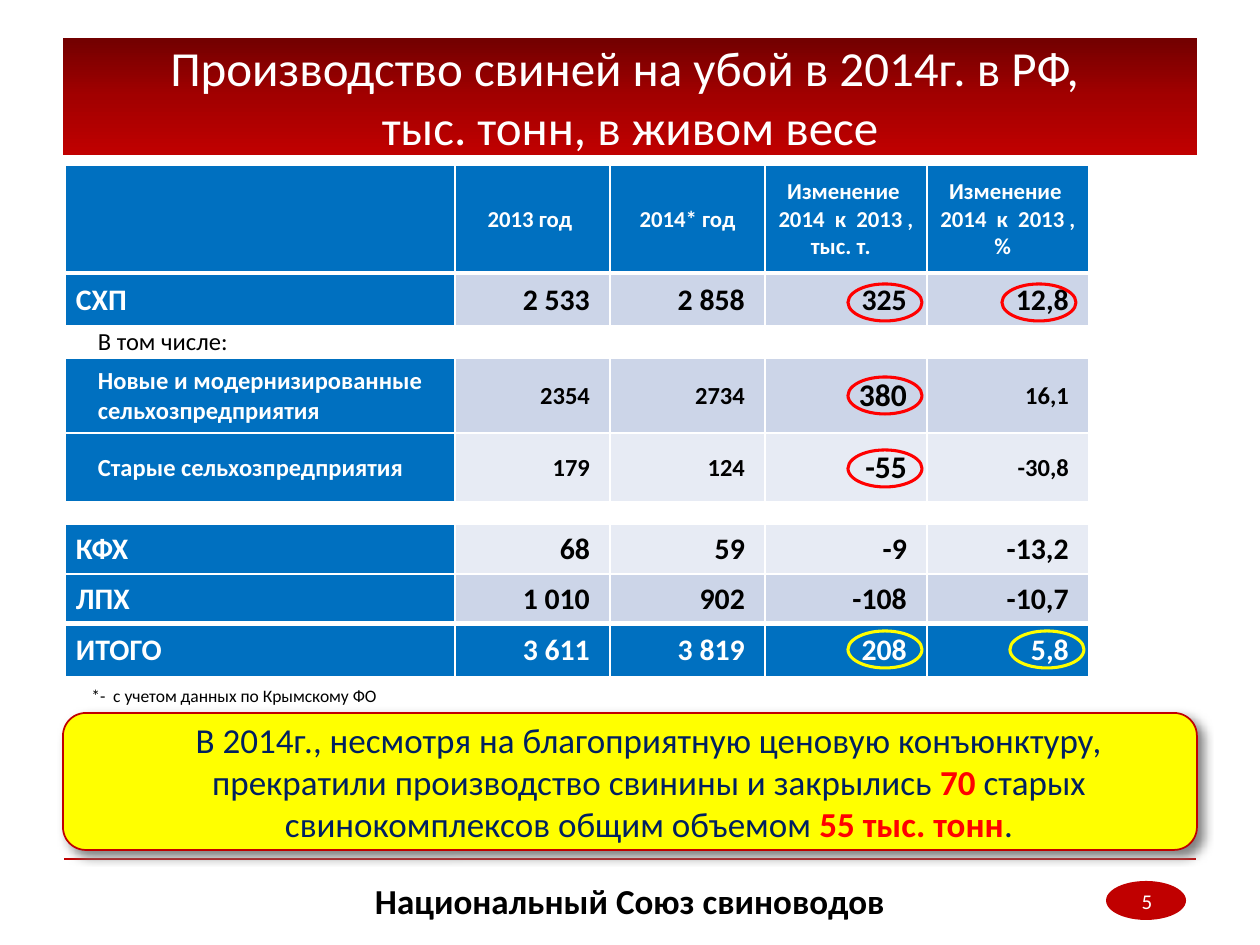
"""Build the slide on pig production for slaughter in 2014."""
from dataclasses import dataclass

from lxml.etree import SubElement
from pptx import Presentation
from pptx.dml.color import RGBColor
from pptx.enum.shapes import MSO_CONNECTOR as Line, MSO_SHAPE as Shape
from pptx.enum.text import MSO_ANCHOR as Anchor, PP_ALIGN as Align
from pptx.oxml import parse_xml
from pptx.oxml.ns import nsdecls, qn
from pptx.util import Emu, Pt


@dataclass(frozen=True)
class Theme:
    font: str = "Calibri"
    white: str = "FFFFFF"
    black: str = "000000"
    blue: str = "0070C0"
    band: str = "CCD5E8"
    pale: str = "E7EBF4"
    red: str = "C00000"
    alert: str = "FF0000"
    yellow: str = "FFFF00"
    navy: str = "002060"
    title: int = 28
    message: int = 20
    key: int = 18
    total: int = 17
    detail: int = 14
    head: int = 13
    number: int = 12
    note: int = 10
    gap: int = 8


T = Theme()
TITLE = "Производство свиней на убой в 2014г. в РФ, \vтыс. тонн, в живом весе"
HEADINGS = ["", "2013 год ", " 2014* год ",
            "Изменение \n2014  к  2013 ,\nтыс. т.  ",
            "Изменение \n2014  к  2013 ,\n%  "]
ROWS = [
    ("total", T.band, ["СХП", "2 533", "2 858", "325", "12,8"]),
    ("open", T.white, ["В том числе:", "", "", "", ""]),
    ("detail", T.band, ["Новые и модернизированные сельхозпредприятия",
                        "2354", "2734", "380", "16,1"]),
    ("detail", T.pale, ["Старые сельхозпредприятия", "179", "124", "-55", "-30,8"]),
    ("open", T.white, ["", "", "", "", ""]),
    ("total", T.pale, ["КФХ", "68", "59", "-9", "-13,2"]),
    ("total", T.band, ["ЛПХ", "1 010", "902", "-108", "-10,7"]),
    ("sum", T.blue, ["ИТОГО", "3 611", "3 819", "208", "5,8"]),
]
COLUMN_WIDTHS = [390, 155, 155, 162, 162]
ROW_HEIGHTS = [108, 53, 32, 75, 69, 22, 50, 50, 53]
MARKS = [(848, 284, T.alert), (1002, 284, T.alert), (848, 377, T.alert),
         (848, 450, T.alert), (848, 631, T.yellow), (1010, 631, T.yellow)]
STRESS = {"color": T.alert, "bold": True}
MESSAGE = [("В 2014г., несмотря на благоприятную ценовую конъюнктуру, "
            "прекратили производство свинины и закрылись ", {}),
           ("70 ", STRESS), ("старых свинокомплексов общим объемом ", {}),
           ("55 тыс. тонн", STRESS), (".", {})]
FOOTNOTE = "*-  с учетом данных по Крымскому ФО"
FOOTER = "Национальный Союз свиноводов"
PAGE = "5"


def px(count):
    return Emu(round(count * 914400 / 126))


def rgb(code):
    return RGBColor.from_string(code)


def write(frame, content, *, size, color=T.black, bold=False,
          align=Align.LEFT, anchor=Anchor.MIDDLE, indent=0):
    """Fill a text frame with a string or a list of (text, format) runs."""
    frame.word_wrap = True
    frame.vertical_anchor = anchor
    lines = ([[(line, {})] for line in content.split("\n")]
             if isinstance(content, str) else [content])
    for index, runs in enumerate(lines):
        paragraph = frame.add_paragraph() if index else frame.paragraphs[0]
        paragraph.alignment = align
        if indent:
            properties = paragraph._p.get_or_add_pPr()
            properties.set("marL", str(px(indent)))
            properties.set("indent", "0")
        for text, style in runs:
            for part_index, part in enumerate(text.split("\v")):
                if part_index:
                    paragraph.add_line_break()
                if not part:
                    SubElement(paragraph._p, qn("a:endParaRPr"), sz=str(size * 100))
                    continue
                run = paragraph.add_run()
                run.text = part
                run.font.name = T.font
                run.font.size = Pt(size)
                run.font.bold = style.get("bold", bold)
                run.font.color.rgb = rgb(style.get("color", color))


def add_label(slide, box, content, **style):
    label = slide.shapes.add_textbox(*map(px, box))
    write(label.text_frame, content, **style)


def add_figure(slide, kind, box, *, fill=None, line=None, width=1):
    figure = slide.shapes.add_shape(kind, *map(px, box))
    figure.shadow.inherit = False
    if fill:
        figure.fill.solid()
        figure.fill.fore_color.rgb = rgb(fill)
    else:
        figure.fill.background()
    if line:
        figure.line.color.rgb = rgb(line)
        figure.line.width = Pt(width)
    else:
        figure.line.fill.background()
    return figure


def add_title(slide):
    banner = add_figure(slide, Shape.RECTANGLE, (63, 38, 1134, 117), fill=T.red)
    fill = parse_xml(
        f'<a:gradFill {nsdecls("a")} rotWithShape="1"><a:gsLst>'
        + "".join(f'<a:gs pos="{pos}"><a:srgbClr val="{code}"/></a:gs>'
                  for pos, code in ((0, "720000"), (50000, "A20000"), (100000, T.red)))
        + '</a:gsLst><a:lin ang="5400000" scaled="0"/></a:gradFill>')
    properties = banner._element.spPr
    properties.replace(properties.find(qn("a:solidFill")), fill)
    write(banner.text_frame, TITLE, size=T.title, color=T.white, align=Align.CENTER)


def set_borders(cell, top, bottom):
    properties = cell._tc.get_or_add_tcPr()
    for index, (side, width) in enumerate(
            (("L", 1), ("R", 1), ("T", top), ("B", bottom))):
        properties.insert(index, parse_xml(
            f'<a:ln{side} {nsdecls("a")} w="{Pt(width)}"><a:solidFill>'
            f'<a:srgbClr val="{T.white}"/></a:solidFill></a:ln{side}>'))


def cell_style(kind, column, text):
    if not text:
        return {"size": T.gap}
    if kind == "head":
        return {"size": T.head, "color": T.white, "bold": True, "align": Align.CENTER}
    size = T.total if kind in ("total", "sum") else T.detail
    if kind == "detail" and column == 3:
        size = T.key
    on_blue = kind == "sum" or (column == 0 and kind != "open")
    return {"size": size, "color": T.white if on_blue else T.black,
            "bold": kind != "open", "align": Align.RIGHT if column else Align.LEFT}


def add_production_table(slide):
    rows = [("head", T.blue, HEADINGS), *ROWS]
    table = slide.shapes.add_table(
        len(rows), len(HEADINGS), px(65), px(165),
        px(sum(COLUMN_WIDTHS)), px(sum(ROW_HEIGHTS))).table
    table.horz_banding = False
    for column, width in zip(table.columns, COLUMN_WIDTHS):
        column.width = px(width)
    for row, height in zip(table.rows, ROW_HEIGHTS):
        row.height = px(height)
    heavy = (1, len(rows) - 1)
    for r, (kind, shade, texts) in enumerate(rows):
        for c, text in enumerate(texts):
            cell = table.cell(r, c)
            cell.fill.solid()
            cell.fill.fore_color.rgb = rgb(T.blue if c == 0 and kind != "open" else shade)
            label_inset = 11 if kind in ("total", "sum") else 33
            cell.margin_left = px(label_inset if c == 0 and kind != "head" else 1)
            cell.margin_right = px(20 if c and kind != "head" else 1)
            cell.margin_top, cell.margin_bottom = px(1), 0
            write(cell.text_frame, text, **cell_style(kind, c, text))
            cell.vertical_anchor = Anchor.MIDDLE
            set_borders(cell, 3 if r in heavy else 1, 3 if r + 1 in heavy else 1)


def add_message(slide):
    panel = add_figure(slide, Shape.ROUNDED_RECTANGLE, (63, 713, 1134, 137),
                       fill=T.yellow, line=T.red)
    effects = panel._element.spPr.find(qn("a:effectLst"))
    shadow = SubElement(effects, qn("a:outerShdw"), blurRad=str(Pt(6)),
                        dist=str(Pt(4)), dir=str(48 * 60000), algn="tl",
                        rotWithShape="0")
    SubElement(shadow, qn("a:srgbClr"), val="808080")
    write(panel.text_frame, MESSAGE, size=T.message, color=T.navy,
          align=Align.CENTER, indent=38)


def add_footer(slide):
    add_figure(slide, Shape.OVAL, (1106, 881, 80, 39), fill=T.red)
    rule = slide.shapes.add_connector(Line.STRAIGHT, px(1196), px(859), px(64), px(859))
    rule.line.color.rgb = rgb(T.red)
    rule.line.width = Pt(1.5)
    SubElement(rule._element.spPr, qn("a:effectLst"))
    add_label(slide, (228, 876, 804, 50), FOOTER, size=T.message, bold=True,
              align=Align.CENTER)
    add_label(slide, (1089, 876, 116, 50), PAGE, size=T.number, color=T.white,
              align=Align.CENTER)


def main():
    deck = Presentation()
    deck.slide_width, deck.slide_height = px(1260), px(945)
    slide = deck.slides.add_slide(deck.slide_layouts[6])
    add_footer(slide)
    add_production_table(slide)
    add_title(slide)
    add_message(slide)
    for left, top, color in MARKS:
        add_figure(slide, Shape.OVAL, (left, top, 74, 37), line=color, width=1.75)
    add_label(slide, (79, 679, 843, 34), FOOTNOTE, size=T.note, anchor=Anchor.TOP)
    deck.save("out.pptx")


if __name__ == "__main__":
    main()
